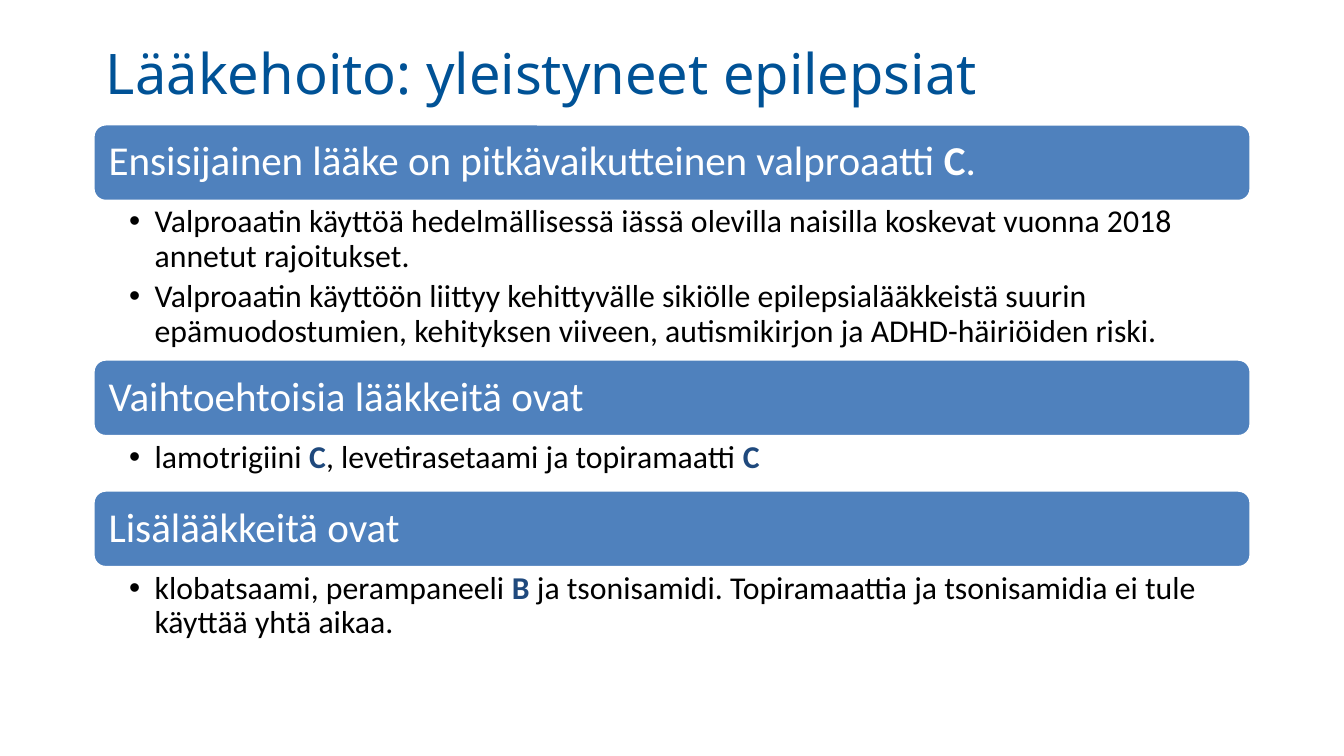
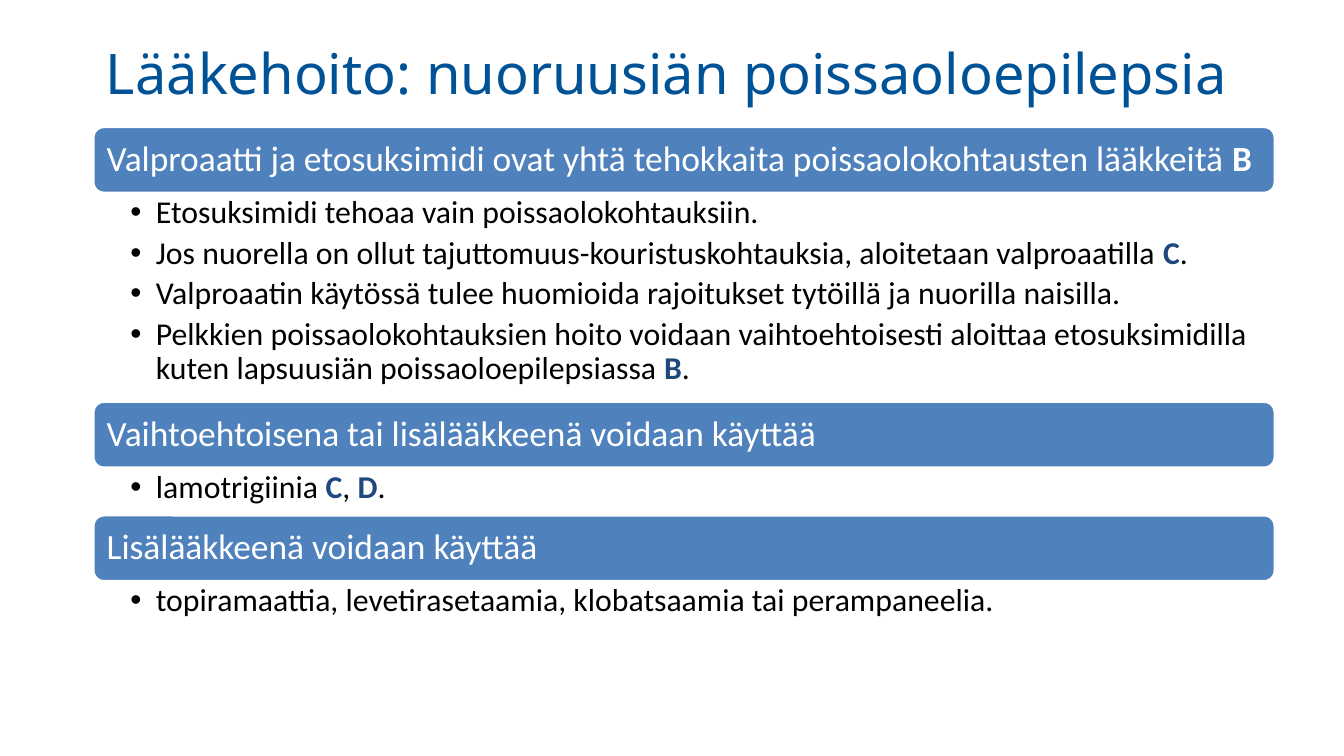
from dataclasses import dataclass

from lxml import etree
from pptx import Presentation
from pptx.dml.color import RGBColor
from pptx.enum.shapes import MSO_SHAPE
from pptx.enum.text import MSO_ANCHOR, PP_ALIGN
from pptx.oxml.ns import qn
from pptx.util import Inches, Pt

ROUNDED = MSO_SHAPE.ROUNDED_RECTANGLE
TOP, MIDDLE = MSO_ANCHOR.TOP, MSO_ANCHOR.MIDDLE
LEFT_ALIGNED = PP_ALIGN.LEFT

# Widescreen 16:9 on a grid of 100 columns and 56.25 rows
SLIDE_WIDTH = Inches(10)
SLIDE_HEIGHT = SLIDE_WIDTH * 9 // 16
COLUMN, ROW = SLIDE_WIDTH / 100, SLIDE_HEIGHT / 56.25
MARGIN = 6.9
TITLE_TOP = 2.4
BULLET_INDENT = 1.9

# Shared style
TITLE_FONT, BODY_FONT = "Noto Sans", "Calibri"
TITLE_SIZE, BULLET_SIZE = 30, 17
TITLE_BLUE, BAR_BLUE, GRADE_BLUE = "005296", "4F81BD", "1F497D"
WHITE, BLACK = "FFFFFF", "000000"
LINE_SPACING = 0.9
BULLET_GAP = 3.4
GRADE_MARK = "*"  # encloses an evidence grade, set in bold


@dataclass(frozen=True)
class Section:
    heading: str
    bullets: list[str]
    rows: float  # height of the bullet area


@dataclass(frozen=True)
class Layout:
    columns: float
    title_rows: float
    top: float
    bar_rows: float
    heading_size: int
    bar_inset: float
    bullet_insets: tuple[float, float, float, float]


@dataclass(frozen=True)
class TreatmentSlide:
    title: str
    layout: Layout
    sections: list[Section]


SLIDES = [
    TreatmentSlide(
        "Lääkehoito: yleistyneet epilepsiat",
        Layout(86.2, 6.1, 9.2, 5.8, 22, 0.9, (2.7, 0.3, 1.7, 0.3)),
        [
            Section("Ensisijainen lääke on pitkävaikutteinen valproaatti *C*.", [
                "Valproaatin käyttöä hedelmällisessä iässä olevilla naisilla "
                "koskevat vuonna 2018 annetut rajoitukset.",
                "Valproaatin käyttöön liittyy kehittyvälle sikiölle "
                "epilepsialääkkeistä suurin epämuodostumien, kehityksen viiveen, "
                "autismikirjon ja ADHD-häiriöiden riski.",
            ], 11.7),
            Section("Vaihtoehtoisia lääkkeitä ovat", [
                "lamotrigiini *C*, levetirasetaami ja topiramaatti *C*",
            ], 3.95),
            Section("Lisälääkkeitä ovat", [
                "klobatsaami, perampaneeli *B* ja tsonisamidi. Topiramaattia ja "
                "tsonisamidia ei tule käyttää yhtä aikaa.",
            ], 5.9),
        ],
    ),
    TreatmentSlide(
        "Lääkehoito: nuoruusiän poissaoloepilepsia",
        Layout(88, 11.1, 9.4, 5, 19, 0.8, (2.8, 0.2, 1.3, 0.2)),
        [
            Section("Valproaatti ja etosuksimidi ovat yhtä tehokkaita "
                    "poissaolokohtausten lääkkeitä *B*", [
                "Etosuksimidi tehoaa vain poissaolokohtauksiin.",
                "Jos nuorella on ollut tajuttomuus-kouristuskohtauksia, "
                "aloitetaan valproaatilla *C*.",
                "Valproaatin käytössä tulee huomioida rajoitukset tytöillä ja "
                "nuorilla naisilla.",
                "Pelkkien poissaolokohtauksien hoito voidaan vaihtoehtoisesti "
                "aloittaa etosuksimidilla kuten lapsuusiän "
                "poissaoloepilepsiassa *B*.",
            ], 15.45),
            Section("Vaihtoehtoisena tai lisälääkkeenä voidaan käyttää", [
                "lamotrigiinia *C*, *D*.",
            ], 3.45),
            Section("Lisälääkkeenä voidaan käyttää", [
                "topiramaattia, levetirasetaamia, klobatsaamia tai perampaneelia.",
            ], 3.45),
        ],
    ),
]


def color(hex_value: str) -> RGBColor:
    return RGBColor.from_string(hex_value)


def grid_box(left: float, top: float, columns: float, rows: float) -> tuple[int, ...]:
    return (round(left * COLUMN), round(top * ROW),
            round(columns * COLUMN), round(rows * ROW))


def set_frame(frame, insets: tuple[float, float, float, float], anchor) -> None:
    frame.word_wrap = True
    frame.vertical_anchor = anchor
    (frame.margin_left, frame.margin_top,
     frame.margin_right, frame.margin_bottom) = (round(i * COLUMN) for i in insets)


def set_font(paragraph, name: str, size: int) -> None:
    paragraph.alignment = LEFT_ALIGNED
    paragraph.font.name = name
    paragraph.font.size = Pt(size)


def write_graded(paragraph, text: str, size: int, text_color: str,
                 grade_color: str) -> None:
    """Write text whose marked evidence grades are bold."""
    paragraph.line_spacing = LINE_SPACING
    set_font(paragraph, BODY_FONT, size)
    for index, piece in enumerate(text.split(GRADE_MARK)):
        if piece:
            is_grade = index % 2 == 1
            run = paragraph.add_run()
            run.text = piece
            run.font.bold = is_grade
            run.font.color.rgb = color(grade_color if is_grade else text_color)


def add_bullet(paragraph) -> None:
    properties = paragraph._p.get_or_add_pPr()
    indent = round(BULLET_INDENT * COLUMN)
    properties.set("marL", str(indent))
    properties.set("indent", str(-indent))
    etree.SubElement(properties, qn("a:buFont")).set("typeface", "Arial")
    etree.SubElement(properties, qn("a:buChar")).set("char", "•")


def draw_title(slide, title: str, layout: Layout) -> None:
    box = slide.shapes.add_textbox(
        *grid_box(MARGIN, TITLE_TOP, layout.columns, layout.title_rows))
    set_frame(box.text_frame, (1, 0.5, 1, 0.5), TOP)
    paragraph = box.text_frame.paragraphs[0]
    set_font(paragraph, TITLE_FONT, TITLE_SIZE)
    paragraph.font.color.rgb = color(TITLE_BLUE)
    paragraph.add_run().text = title


def draw_heading_bar(slide, heading: str, top: float, layout: Layout) -> None:
    bar = slide.shapes.add_shape(
        ROUNDED, *grid_box(MARGIN, top, layout.columns, layout.bar_rows))
    bar.shadow.inherit = False
    bar.fill.solid()
    bar.fill.fore_color.rgb = color(BAR_BLUE)
    bar.line.color.rgb = color(WHITE)
    bar.line.width = Pt(2)
    set_frame(bar.text_frame, (layout.bar_inset,) * 4, MIDDLE)
    write_graded(bar.text_frame.paragraphs[0], heading,
                 layout.heading_size, WHITE, WHITE)


def draw_bullets(slide, section: Section, top: float, layout: Layout) -> None:
    box = slide.shapes.add_textbox(
        *grid_box(MARGIN, top, layout.columns, section.rows))
    frame = box.text_frame
    set_frame(frame, layout.bullet_insets, TOP)
    for index, bullet in enumerate(section.bullets):
        paragraph = frame.add_paragraph() if index else frame.paragraphs[0]
        add_bullet(paragraph)
        paragraph.space_after = Pt(BULLET_GAP)
        write_graded(paragraph, bullet, BULLET_SIZE, BLACK, GRADE_BLUE)


def draw_slide(deck, content: TreatmentSlide) -> None:
    slide = deck.slides.add_slide(deck.slide_layouts[6])
    layout = content.layout
    draw_title(slide, content.title, layout)
    # Stack each heading bar directly above its bullets
    top = layout.top
    for section in content.sections:
        draw_heading_bar(slide, section.heading, top, layout)
        top += layout.bar_rows
        draw_bullets(slide, section, top, layout)
        top += section.rows


def main() -> None:
    deck = Presentation()
    deck.slide_width, deck.slide_height = SLIDE_WIDTH, SLIDE_HEIGHT
    for content in SLIDES:
        draw_slide(deck, content)
    deck.save("out.pptx")


if __name__ == "__main__":
    main()
